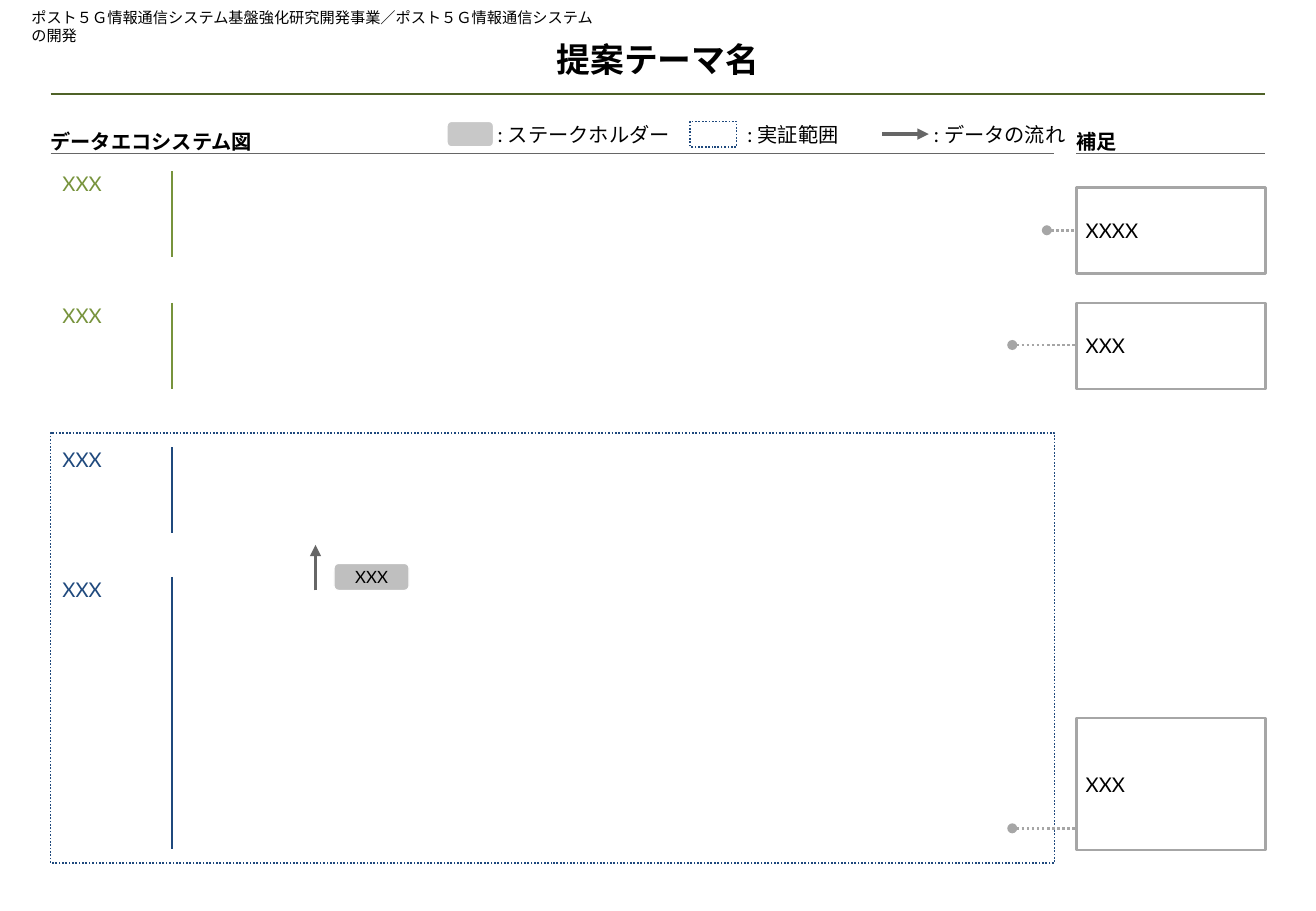
import dataclasses

import lxml.etree
import pptx
import pptx.dml.color
import pptx.enum.dml
import pptx.enum.shapes
import pptx.enum.text
import pptx.oxml.ns
import pptx.util
from typing import Any, Optional

Pt = pptx.util.Pt
RGB = pptx.dml.color.RGBColor
Kind = pptx.enum.shapes.MSO_SHAPE
Anchor = pptx.enum.text.MSO_ANCHOR
Align = pptx.enum.text.PP_ALIGN
qn = pptx.oxml.ns.qn

BLACK = RGB(0x00, 0x00, 0x00)
WHITE = RGB(0xFF, 0xFF, 0xFF)
OLIVE = RGB(0x4F, 0x62, 0x28)
GREEN = RGB(0x77, 0x93, 0x3C)
NAVY = RGB(0x1F, 0x49, 0x7D)
DARK = RGB(0x66, 0x66, 0x66)
GREY = RGB(0xA6, 0xA6, 0xA6)
PALE = RGB(0xC8, 0xC8, 0xC8)
CHIP = RGB(0xBF, 0xBF, 0xBF)

LATIN = "Lato"
ASIAN = "Noto Sans CJK JP"
LEFT, RIGHT = 30, 750
NOTE_X, NOTE_W = 638, 112
MAP_W = 595
KEY_Y, KEY_W, KEY_H = 72, 27.5, 15


@dataclasses.dataclass
class Box:
    x: float
    y: float
    w: float
    h: float


@dataclasses.dataclass
class Head:
    text: str
    x: float
    w: float


@dataclasses.dataclass
class Lane:
    y: float
    h: float
    color: RGB


@dataclasses.dataclass
class Note:
    text: str
    y: float
    h: float
    dot_x: float
    dot_y: float


@dataclasses.dataclass
class Key:
    text: str
    x: float
    text_x: float
    text_w: float


def apply(item: Any, values: dict[str, Any]) -> None:
    for name, value in values.items():
        setattr(item, name, value)


def write(shape: Any, text: str, size: float = 12, color: RGB = BLACK,
          bold: bool = False, align: Align = Align.LEFT, font: str = LATIN,
          inset: tuple = (0, 0, 0, 0), anchor: Anchor = Anchor.TOP,
          wrap: bool = True) -> None:
    frame = shape.text_frame
    sides = ("left", "top", "right", "bottom")
    apply(frame, {f"margin_{side}": Pt(gap) for side, gap in zip(sides, inset)})
    apply(frame, {"word_wrap": wrap, "vertical_anchor": anchor,
                  "auto_size": pptx.enum.text.MSO_AUTO_SIZE.NONE})
    par = frame.paragraphs[0]
    par.alignment = align
    run = par.add_run()
    run.text = text
    apply(run.font, {"size": Pt(size), "bold": bold, "name": font})
    run.font.color.rgb = color
    latin = run.font._element.find(qn("a:latin"))
    asian = lxml.etree.Element(qn("a:ea"), typeface=ASIAN)
    latin.addnext(asian)


def label(slide: Any, box: Box, text: str, **look: Any) -> None:
    spot = slide.shapes.add_textbox(Pt(box.x), Pt(box.y), Pt(box.w), Pt(box.h))
    write(spot, text, **look)


def stroke(line: Any, color: RGB, width: float, dots: bool = False) -> None:
    line.color.rgb = color
    line.width = Pt(width)
    if dots:
        line.dash_style = pptx.enum.dml.MSO_LINE.ROUND_DOT


def panel(slide: Any, kind: Kind, box: Box, fill: Optional[RGB], edge: RGB,
          width: float, dots: bool = False) -> Any:
    shape = slide.shapes.add_shape(kind, Pt(box.x), Pt(box.y), Pt(box.w), Pt(box.h))
    shape.shadow.inherit = False
    if fill is None:
        shape.fill.background()
    else:
        shape.fill.solid()
        shape.fill.fore_color.rgb = fill
    stroke(shape.line, edge, width, dots)
    return shape


def rule(slide: Any, x1: float, y1: float, x2: float, y2: float, color: RGB,
         width: float, dots: bool = False, head: str = "", tail: str = "") -> None:
    line = slide.shapes.add_connector(pptx.enum.shapes.MSO_CONNECTOR.STRAIGHT,
                                      Pt(x1), Pt(y1), Pt(x2), Pt(y2))
    stroke(line.line, color, width, dots)
    props = line.element.spPr
    for tag, end in (("a:headEnd", head), ("a:tailEnd", tail)):
        if end:
            lxml.etree.SubElement(props.find(qn("a:ln")), qn(tag), type=end)
    lxml.etree.SubElement(props, qn("a:effectLst"))


HEADS = [Head("補足", NOTE_X, NOTE_W), Head("データエコシステム図", LEFT, MAP_W)]
LANES = [Lane(101.5, 51, GREEN), Lane(179.5, 51, GREEN),
         Lane(265, 51, NAVY), Lane(342, 161.5, NAVY)]
NOTES = [Note("XXXX", 111, 51, 620.5, 136.5), Note("XXX", 179.5, 51, 600, 204.5),
         Note("XXX", 425.5, 78.5, 600, 491)]
HOLDER = Key(": ステークホルダー", 265, 295, 84.5)
SCOPE = Key(": 実証範囲", 409, 443, 50.5)
FLOW = Key(": データの流れ", 523, 553.5, 71.5)


def main() -> None:
    deck = pptx.Presentation()
    apply(deck, {"slide_width": Pt(780), "slide_height": Pt(540)})
    slide = deck.slides.add_slide(deck.slide_layouts[5])

    # Title and programme name
    title = slide.shapes.title
    apply(title, {"left": Pt(LEFT), "top": Pt(15), "width": Pt(720), "height": Pt(40.5)})
    write(title, "提案テーマ名", size=20, bold=True, align=Align.CENTER,
          font=ASIAN, anchor=Anchor.MIDDLE)
    rule(slide, LEFT, 55.5, RIGHT, 55.5, OLIVE, 1.25)
    label(slide, Box(11.5, 1.5, 348.5, 18),
          "ポスト５Ｇ情報通信システム基盤強化研究開発事業／ポスト５Ｇ情報通信システムの開発",
          size=9, inset=(7.2, 3.6, 7.2, 3.6))

    # Section headings
    for head in HEADS:
        label(slide, Box(head.x, 71.5, head.w, 19.5), head.text,
              bold=True, anchor=Anchor.BOTTOM)
        rule(slide, head.x, 91, head.x + head.w, 91, DARK, 0.75)

    # Trial scope and lanes
    panel(slide, Kind.RECTANGLE, Box(LEFT, 256.5, MAP_W, 255), None, NAVY, 1, True)
    for lane in LANES:
        label(slide, Box(37, lane.y, 65, lane.h), "XXX", color=lane.color)
        rule(slide, 102, lane.y, 102, lane.y + lane.h, lane.color, 1.5)

    # Legend
    mid = KEY_Y + KEY_H / 2
    rule(slide, FLOW.x, mid, FLOW.x + KEY_W, mid, DARK, 2.25, tail="triangle")
    panel(slide, Kind.RECTANGLE, Box(SCOPE.x, KEY_Y, KEY_W, KEY_H), None, NAVY, 1, True)
    panel(slide, Kind.ROUNDED_RECTANGLE, Box(HOLDER.x, KEY_Y, KEY_W, KEY_H),
          PALE, WHITE, 0.75)
    for key in (FLOW, SCOPE, HOLDER):
        label(slide, Box(key.text_x, KEY_Y, key.text_w, KEY_H), key.text,
              anchor=Anchor.MIDDLE, wrap=False)

    # Side notes
    for note in NOTES:
        rule(slide, note.dot_x, note.dot_y, NOTE_X, note.dot_y, GREY, 1.5, True, head="oval")
        card = panel(slide, Kind.RECTANGLE, Box(NOTE_X, note.y, NOTE_W, note.h),
                     WHITE, GREY, 1.5)
        write(card, note.text, inset=(5.5, 3.6, 3, 3.6), anchor=Anchor.MIDDLE)

    # Sample stakeholder and data flow
    chip = panel(slide, Kind.ROUNDED_RECTANGLE, Box(198, 334, 44.5, 16), CHIP, WHITE, 0.75)
    chip.adjustments[0] = 0.17
    write(chip, "XXX", size=10, align=Align.CENTER, anchor=Anchor.MIDDLE)
    rule(slide, 187, 350, 187, 323, DARK, 2.25, tail="triangle")

    deck.save("out.pptx")


if __name__ == "__main__":
    main()
